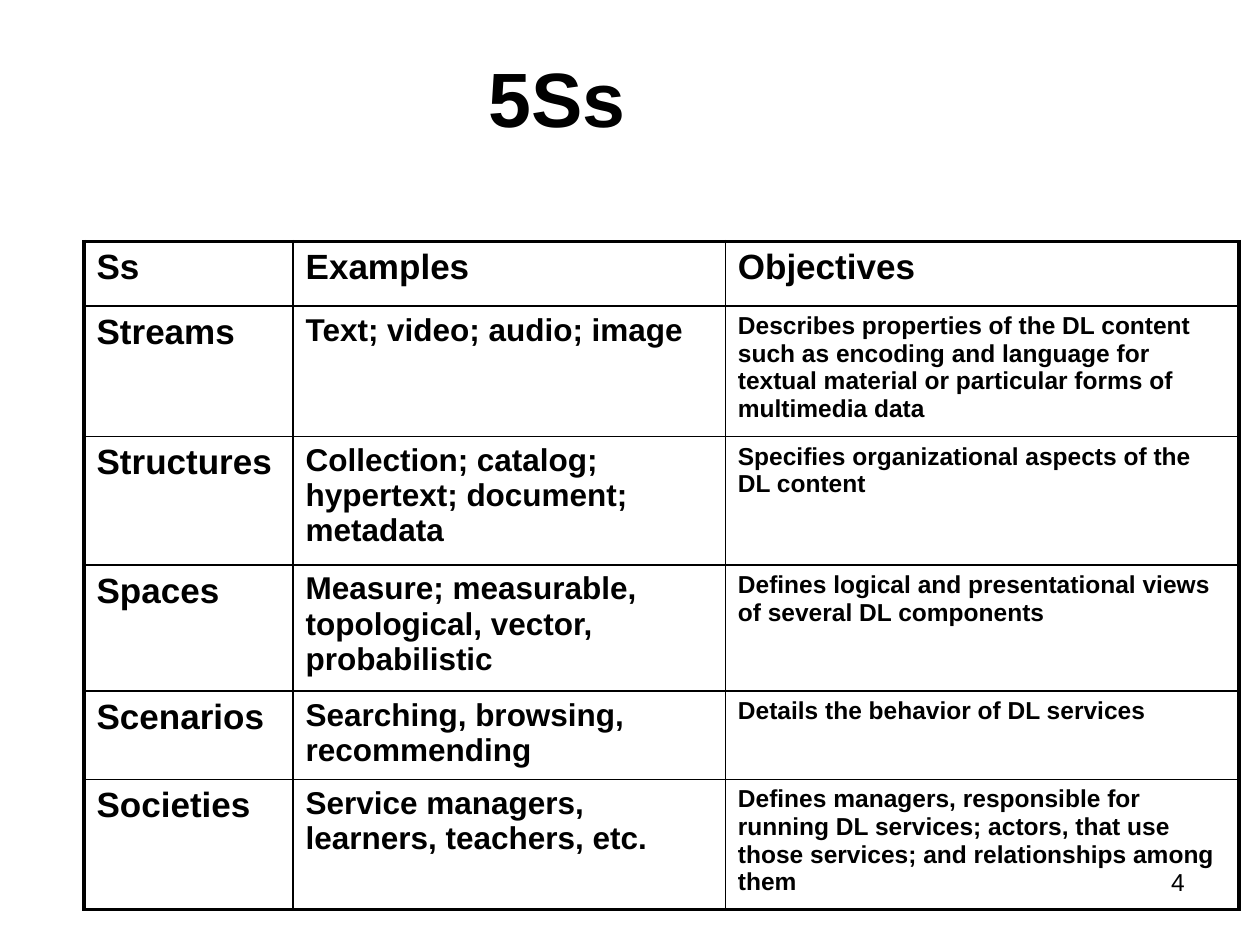
"""Build the 5Ss slide: a title, a page number and a ruled table."""
from dataclasses import dataclass

from lxml import etree
from pptx import Presentation
from pptx.dml.color import RGBColor
from pptx.enum.text import MSO_ANCHOR, PP_ALIGN
from pptx.oxml.ns import qn
from pptx.util import Pt

LEFT, CENTER, RIGHT = PP_ALIGN.LEFT, PP_ALIGN.CENTER, PP_ALIGN.RIGHT
TOP, MIDDLE = MSO_ANCHOR.TOP, MSO_ANCHOR.MIDDLE
FONT = "Arial"
BLACK = "000000"
THIN, THICK = 1, 2.25
HEADER_SIZE = 20
COLUMN_WIDTHS = (119.5, 247, 293.5)
COLUMN_SIZES = (20, 18, 14)


@dataclass
class TableRow:
    height: float
    texts: tuple[str, str, str]


ROWS = [
    TableRow(37, ("Ss", "Examples", "Objectives")),
    TableRow(73, ("Streams", "Text; video; audio; image",
                  "Describes properties of the DL content such as encoding and language "
                  "for textual material or particular forms of multimedia data")),
    TableRow(73.5, ("Structures", "Collection; catalog; hypertext; document; metadata",
                    "Specifies organizational aspects of the DL content")),
    TableRow(67.5, ("Spaces", "Measure; measurable, topological, vector, probabilistic",
                    "Defines logical and presentational views of several DL components")),
    TableRow(50, ("Scenarios", "Searching, browsing, recommending",
                  "Details the behavior of DL services")),
    TableRow(74, ("Societies", "Service managers, learners, teachers, etc.",
                  "Defines managers, responsible for running DL services; actors, that use "
                  "those services; and relationships among them")),
]


def color(value: str) -> RGBColor:
    return RGBColor.from_string(value)


def write(text_frame, text: str, size: float, bold: bool, alignment=LEFT) -> None:
    text_frame.text = text
    text_frame.word_wrap = True
    paragraph = text_frame.paragraphs[0]
    paragraph.alignment = alignment
    font = paragraph.runs[0].font
    font.name, font.size, font.bold = FONT, Pt(size), bold
    font.color.rgb = color(BLACK)


def set_borders(cell, widths: dict[str, float]) -> None:
    properties = cell._tc.get_or_add_tcPr()
    for position, (side, width) in enumerate(widths.items()):
        line = etree.Element(qn(f"a:ln{side}"), w=str(Pt(width)))
        fill = etree.SubElement(line, qn("a:solidFill"))
        etree.SubElement(fill, qn("a:srgbClr"), val=BLACK)
        properties.insert(position, line)


def add_title(page, text: str) -> None:
    title = page.shapes.title
    title.left, title.top, title.width, title.height = Pt(214), Pt(21.5), Pt(209), Pt(67)
    write(title.text_frame, text, 44, True, CENTER)
    title.text_frame.vertical_anchor = MIDDLE


def add_page_number(page, text: str) -> None:
    box = page.shapes.add_textbox(Pt(516), Pt(492), Pt(168), Pt(37.5))
    write(box.text_frame, text, 14, False, RIGHT)


def add_ruled_table(page, rows: list[TableRow]) -> None:
    last_row, last_column = len(rows) - 1, len(COLUMN_WIDTHS) - 1
    frame = page.shapes.add_table(
        len(rows), len(COLUMN_WIDTHS), Pt(48), Pt(138),
        Pt(sum(COLUMN_WIDTHS)), Pt(sum(row.height for row in rows)))
    table = frame.table
    table.first_row = table.horz_banding = False
    for column, width in zip(table.columns, COLUMN_WIDTHS):
        column.width = Pt(width)
    for row_index, row in enumerate(rows):
        table.rows[row_index].height = Pt(row.height)
        for column_index, text in enumerate(row.texts):
            cell = table.cell(row_index, column_index)
            size = COLUMN_SIZES[column_index] if row_index else HEADER_SIZE
            write(cell.text_frame, text, size, True)
            cell.vertical_anchor = TOP
            cell.fill.background()
            set_borders(cell, {
                "L": THICK if column_index == 0 else THIN,
                "R": THICK if column_index == last_column else THIN,
                "T": THICK if row_index == 0 else THIN,
                "B": THICK if row_index == last_row else THIN,
            })


def main() -> None:
    deck = Presentation()
    deck.slide_width, deck.slide_height = Pt(720), Pt(540)
    page = deck.slides.add_slide(deck.slide_layouts[5])
    add_title(page, "5Ss")
    add_page_number(page, "4")
    add_ruled_table(page, ROWS)
    deck.save("out.pptx")


if __name__ == "__main__":
    main()
